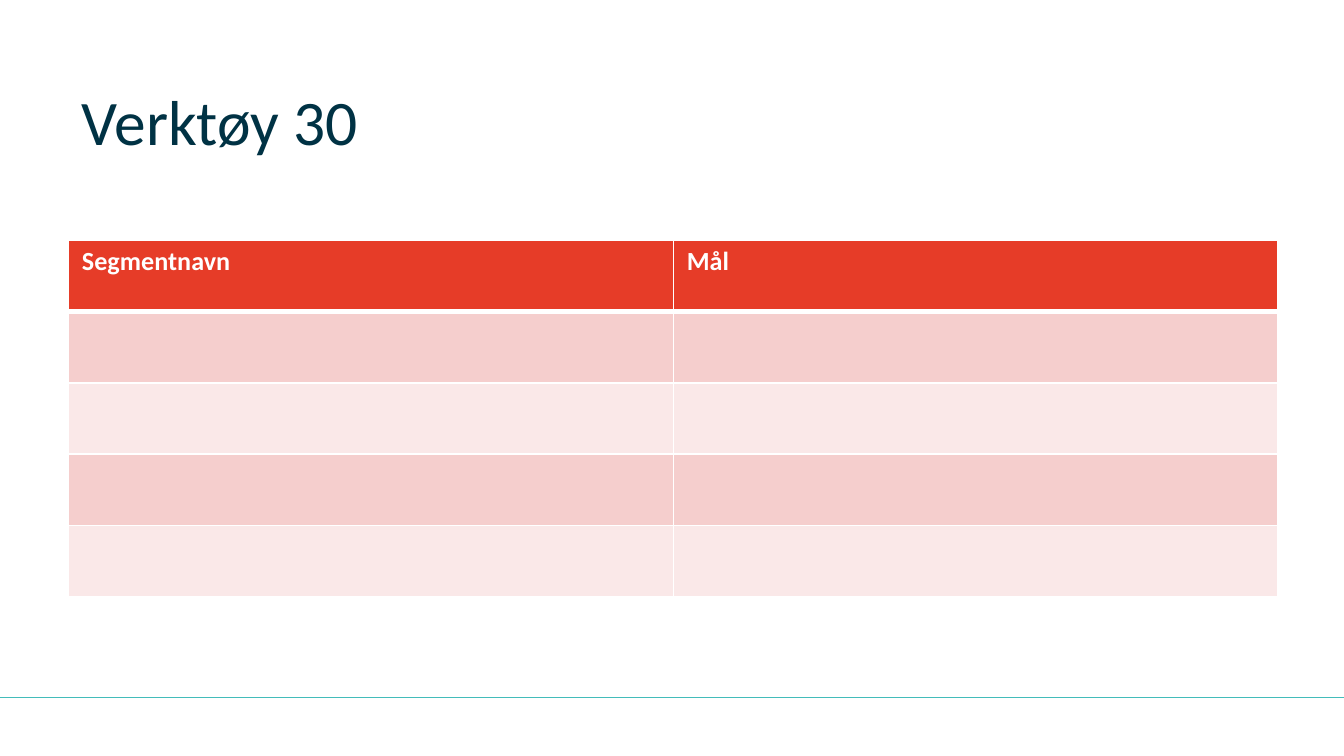
from lxml.etree import SubElement
from pptx import Presentation
from pptx.dml.color import RGBColor
from pptx.enum.shapes import MSO_CONNECTOR
from pptx.enum.text import MSO_ANCHOR, PP_ALIGN
from pptx.oxml.ns import qn
from pptx.util import Inches, Pt

TITLE = "Verktøy 30"
HEADERS = ["Segmentnavn", "Mål"]
EMPTY_ROWS = 4

FONT = "Calibri"
COLORS = {
    "title": "003244",
    "header": "E63C28",
    "header_text": "FFFFFF",
    "border": "FFFFFF",
    "odd_row": "F5CECD",
    "even_row": "FAE8E8",
    "footer_rule": "43BCBA",
}
WIDTH = 10
HEIGHT = WIDTH * 9 / 16
LEFT = 0.51
TABLE_TOP, TABLE_WIDTH, ROW_HEIGHT = 1.79, 9, 0.53
RULE_Y = 5.19


def color(name):
    return RGBColor.from_string(COLORS[name])


def style(paragraph, size, color_name, bold=False):
    font = paragraph.font
    font.name, font.size, font.bold = FONT, Pt(size), bold
    font.color.rgb = color(color_name)


def add_border(cell, side, points):
    """Draw one cell edge; call it before the cell is filled."""
    edge = SubElement(cell._tc.get_or_add_tcPr(), qn(f"a:{side}"), w=str(Pt(points)))
    fill = SubElement(edge, qn("a:solidFill"))
    SubElement(fill, qn("a:srgbClr"), val=COLORS["border"])


def add_footer_rule(slide):
    rule = slide.shapes.add_connector(
        MSO_CONNECTOR.STRAIGHT, 0, Inches(RULE_Y), Inches(WIDTH), Inches(RULE_Y))
    rule.line.color.rgb = color("footer_rule")
    rule.line.width = Pt(1)
    SubElement(rule._element.spPr, qn("a:effectLst"))


def add_title(slide):
    title = slide.shapes.title
    title.left, title.top = Inches(LEFT), Inches(0.55)
    title.width, title.height = Inches(8.98), Inches(0.68)
    frame = title.text_frame
    frame.text = TITLE
    frame.vertical_anchor = MSO_ANCHOR.BOTTOM
    heading = frame.paragraphs[0]
    heading.alignment = PP_ALIGN.LEFT
    style(heading, 34, "title")


def add_segment_table(slide):
    row_count = 1 + EMPTY_ROWS
    table = slide.shapes.add_table(
        row_count, len(HEADERS), Inches(LEFT), Inches(TABLE_TOP),
        Inches(TABLE_WIDTH), Inches(ROW_HEIGHT * row_count)).table
    for index, row in enumerate(table.rows):
        row.height = Inches(ROW_HEIGHT)
        band = "header" if index == 0 else "odd_row" if index % 2 else "even_row"
        for cell in row.cells:
            for side in ("lnL", "lnR", "lnT", "lnB"):
                below_header = (index, side) in ((0, "lnB"), (1, "lnT"))
                add_border(cell, side, 3 if below_header else 1)
            cell.fill.solid()
            cell.fill.fore_color.rgb = color(band)
            cell.margin_top = cell.margin_bottom = Inches(0.04)
    for cell, header in zip(table.rows[0].cells, HEADERS):
        cell.text = header
        style(cell.text_frame.paragraphs[0], 14, "header_text", bold=True)


def main():
    deck = Presentation()
    deck.slide_width, deck.slide_height = Inches(WIDTH), Inches(HEIGHT)
    slide = deck.slides.add_slide(deck.slide_layouts[5])
    add_footer_rule(slide)
    add_title(slide)
    add_segment_table(slide)
    deck.save("out.pptx")


if __name__ == "__main__":
    main()
